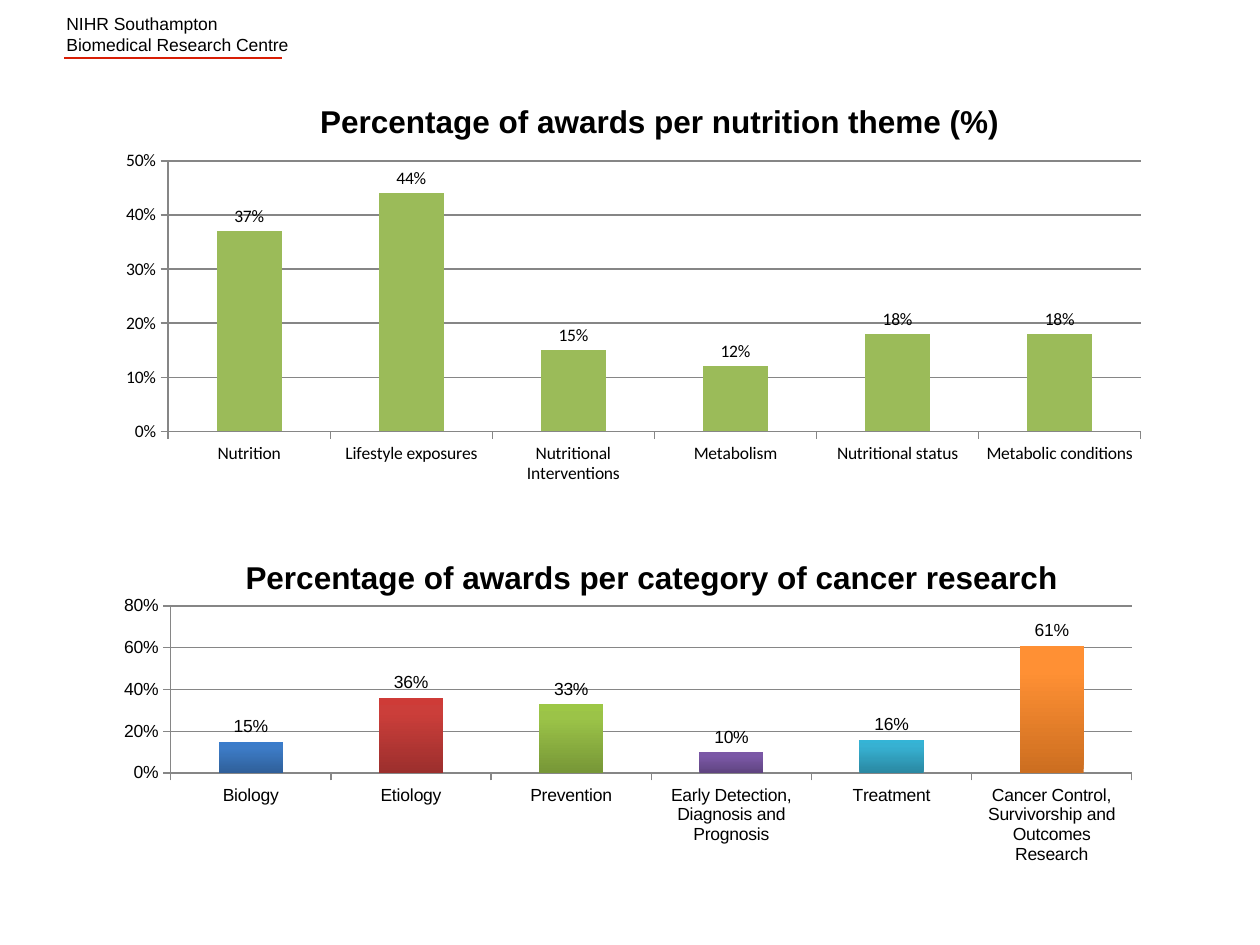
"""Build a slide with two column charts of research awards."""
from copy import deepcopy
from dataclasses import dataclass

from pptx import Presentation
from pptx.chart.data import CategoryChartData
from pptx.dml.color import RGBColor
from pptx.enum.chart import XL_CHART_TYPE, XL_LABEL_POSITION, XL_TICK_MARK
from pptx.enum.shapes import MSO_CONNECTOR
from pptx.enum.text import MSO_ANCHOR, MSO_AUTO_SIZE, PP_ALIGN
from pptx.oxml import parse_xml
from pptx.oxml.ns import nsdecls, qn
from pptx.util import Cm, Pt

Box = tuple[float, float, float, float]


@dataclass
class Graph:
    """Describe one column chart."""
    box: Box
    plot: Box
    face: str
    top: float
    step: float
    bars: dict[str, float]
    fills: list[tuple[str, ...]]


GRAPHS = [
    Graph((2.11, 11.91, 21.13, 5.61), (0.063, 0.055, 0.917, 0.6), "Arial", 0.8, 0.2,
          {"Biology": 0.15, "Etiology": 0.36, "Prevention": 0.33,
           "Early Detection, Diagnosis and Prognosis": 0.1, "Treatment": 0.16,
           "Cancer Control, Survivorship and Outcomes Research": 0.61},
          [("2F5F99", "3D7CC7", "3A7CCB"), ("9C2F2D", "CB3E3A", "CE3B37"),
           ("779737", "9BC348", "9DC746"), ("5F4480", "7B58A6", "7C57A8"),
           ("2A88A2", "37B1D2", "34B4D6"), ("CC6E20", "FF9034", "FF9136")]),
    Graph((2.11, 2.92, 21.31, 6.96), (0.06, 0.047, 0.92, 0.783), "Calibri", 0.5, 0.1,
          {"Nutrition": 0.37, "Lifestyle exposures": 0.44,
           "Nutritional Interventions": 0.15, "Metabolism": 0.12,
           "Nutritional status": 0.18, "Metabolic conditions": 0.18}, []),
]


def paint(color, code: str) -> None:
    """Set a colour from a hex string."""
    color.rgb = RGBColor.from_string(code)


def write(shape, box: Box, lines: list[str], size: float, bold: bool = False,
          align=PP_ALIGN.LEFT) -> None:
    """Place a text shape and fill it line by line."""
    shape.left, shape.top, shape.width, shape.height = map(Cm, box)
    frame = shape.text_frame
    frame.word_wrap = True
    frame.auto_size = MSO_AUTO_SIZE.NONE
    frame.vertical_anchor = MSO_ANCHOR.TOP
    for i, line in enumerate(lines):
        para = frame.add_paragraph() if i else frame.paragraphs[0]
        para.alignment = align
        run = para.add_run()
        run.text = line
        run.font.name, run.font.size, run.font.bold = "Arial", Pt(size), bold
        paint(run.font.color, "000000")


def shade(fill, codes: tuple[str, ...]) -> None:
    """Fill with a three-stop gradient that runs upwards."""
    fill.gradient()
    fill.gradient_angle = 90
    stops = fill.gradient_stops
    stops._gsLst.append(deepcopy(stops._gsLst[0]))
    for stop, place, code in zip(fill.gradient_stops, (0, 0.8, 1), codes):
        stop.position = place
        paint(stop.color, code)


def set_plot(chart, plot: Box) -> None:
    """Fix the inner plot area as fractions of the chart."""
    area = chart._chartSpace.find(".//" + qn("c:plotArea"))
    for old in area.findall(qn("c:layout")):
        area.remove(old)
    parts = "".join(f'<c:{tag} val="{val}"/>' for tag, val in zip("xywh", plot))
    area.insert(0, parse_xml(
        f'<c:layout {nsdecls("c")}><c:manualLayout><c:layoutTarget val="inner"/>'
        f'<c:xMode val="edge"/><c:yMode val="edge"/>{parts}</c:manualLayout></c:layout>'))


def draw(slide, graph: Graph) -> None:
    """Add one column chart to the slide."""
    data = CategoryChartData(number_format="0%")
    data.categories = list(graph.bars)
    data.add_series("Series 1", list(graph.bars.values()))
    chart = slide.shapes.add_chart(
        XL_CHART_TYPE.COLUMN_CLUSTERED, *map(Cm, graph.box), data).chart
    chart.has_legend = chart.has_title = False
    chart.font.name, chart.font.size = graph.face, Pt(10)
    paint(chart.font.color, "000000")
    set_plot(chart, graph.plot)

    axis = chart.value_axis
    axis.minimum_scale, axis.maximum_scale = 0, graph.top
    axis.major_unit = graph.step
    axis.has_major_gridlines = True
    axis.tick_labels.number_format = "0%"
    axis.tick_labels.number_format_is_linked = False
    for side in (axis, chart.category_axis):
        side.major_tick_mark = XL_TICK_MARK.OUTSIDE
    for line in (axis.format.line, axis.major_gridlines.format.line,
                 chart.category_axis.format.line):
        paint(line.color, "868686")
        line.width = Pt(0.75)

    plot = chart.plots[0]
    plot.gap_width = 150
    plot.vary_by_categories = False
    plot.has_data_labels = True
    labels = plot.data_labels
    labels.show_value = True
    labels.position = XL_LABEL_POSITION.OUTSIDE_END
    labels.number_format = "0%"
    labels.number_format_is_linked = False
    series = plot.series[0]
    series.invert_if_negative = False
    series.format.fill.solid()
    paint(series.format.fill.fore_color, "9BBB59")
    for i, codes in enumerate(graph.fills):
        shade(series.points[i].format.fill, codes)


def main() -> None:
    """Build and save the slide."""
    deck = Presentation()
    deck.slide_width, deck.slide_height = Cm(25.4), Cm(19.05)
    slide = deck.slides.add_slide(deck.slide_layouts[5])
    shapes = slide.shapes

    head = shapes.add_textbox(0, 0, 0, 0)
    write(head, (1.09, 0.13, 11.81, 1.12),
          ["NIHR Southampton", "Biomedical Research Centre"], 10)
    rule = shapes.add_connector(MSO_CONNECTOR.STRAIGHT, Cm(1.3), Cm(1.17), Cm(5.69), Cm(1.17))
    paint(rule.line.color, "D81E05")
    rule.line.width = Pt(0.75)
    rule._element.spPr.append(parse_xml(f'<a:effectLst {nsdecls("a")}/>'))

    for graph in GRAPHS:
        draw(slide, graph)
    write(shapes.title, (4.5, 1.93, 17.6, 1.02),
          ["Percentage of awards per nutrition theme (%)"], 18, True, PP_ALIGN.CENTER)
    label = shapes.add_textbox(0, 0, 0, 0)
    write(label, (4.7, 11.13, 17, 1.02),
          ["Percentage of awards per category of cancer research"], 18, True)
    deck.save("out.pptx")


if __name__ == "__main__":
    main()
